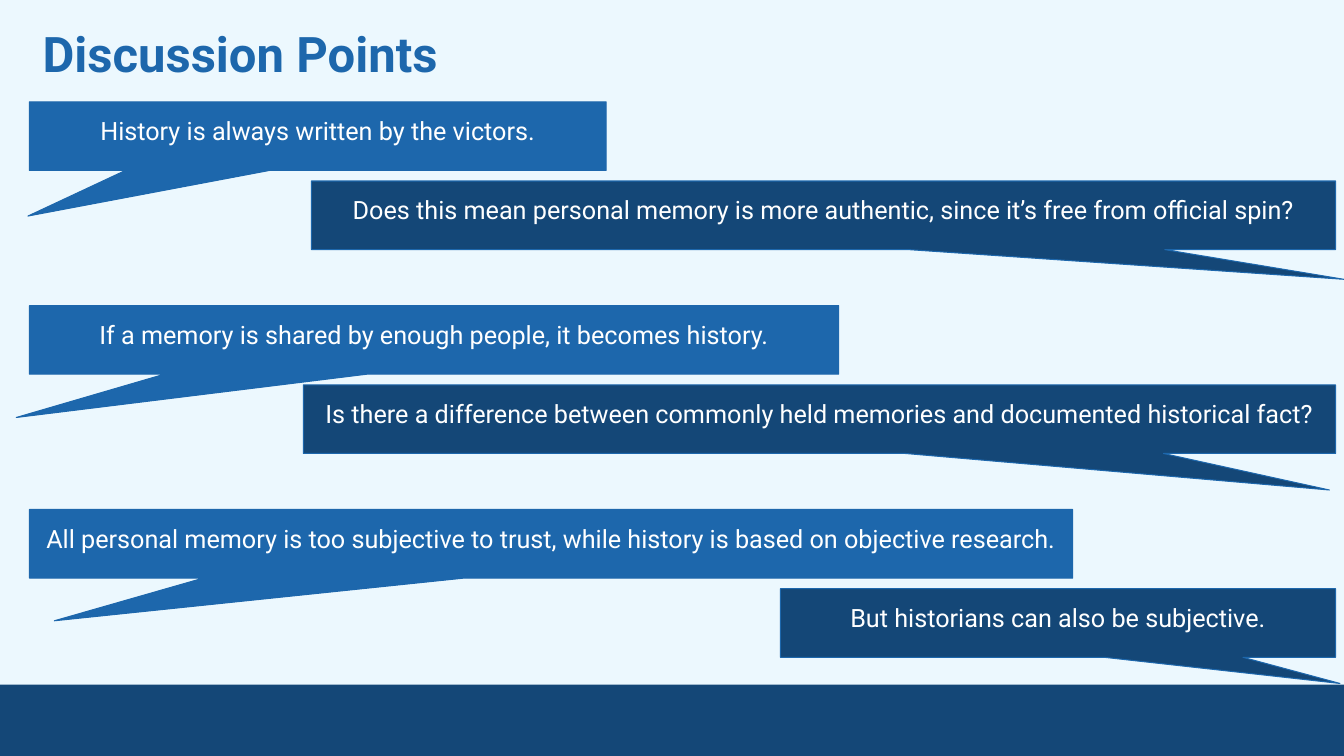
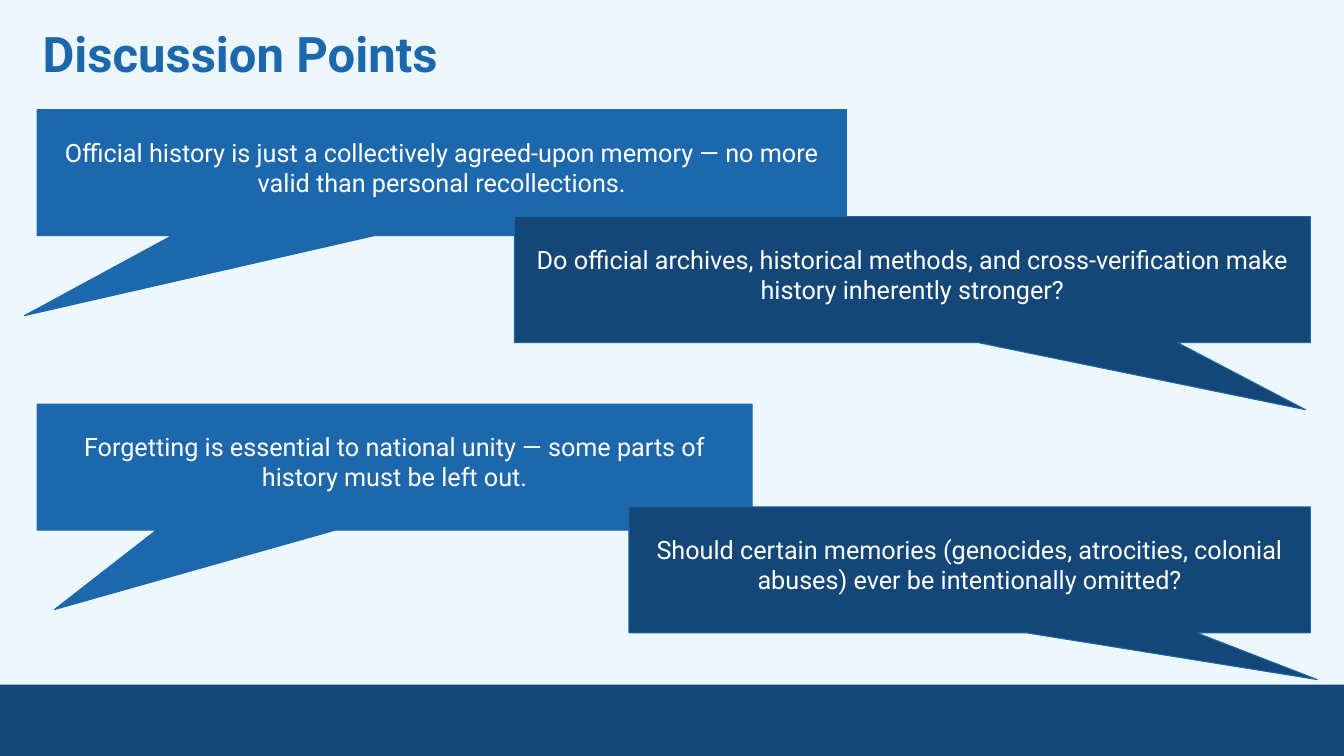
from dataclasses import dataclass
from pptx import Presentation
from pptx import util as u
from pptx.dml import color
from pptx.enum import shapes, text

Pt = u.Pt
KIND = shapes.MSO_SHAPE
HEAD = "Discussion Points"


@dataclass(frozen=True)
class Theme:
    font: str = "Roboto"
    pale: str = "ECF8FE"
    blue: str = "1D67AC"
    navy: str = "144777"
    white: str = "FFFFFF"
    head: int = 35
    body: int = 18
    wide: int = 960
    high: int = 540
    band: int = 51


T = Theme()


def rgb(code):
    return color.RGBColor.from_string(code)


def write(frame, words, size, ink, bold=False):
    run = frame.paragraphs[0].add_run()
    run.text = words
    run.font.name = T.font
    run.font.size = Pt(size)
    run.font.bold = bold
    run.font.color.rgb = rgb(ink)


def inset(frame, side, top, base):
    frame.word_wrap = True
    frame.margin_left = frame.margin_right = Pt(side)
    frame.margin_top, frame.margin_bottom = Pt(top), Pt(base)


def block(slide, kind, spot, fill, line=None):
    shape = slide.shapes.add_shape(kind, *map(Pt, spot))
    shape.shadow.inherit = False
    shape.fill.solid()
    shape.fill.fore_color.rgb = rgb(fill)
    if line:
        shape.line.color.rgb = rgb(line)
        shape.line.width = Pt(0.75)
    else:
        shape.line.fill.background()
    return shape


def page(deck):
    slide = deck.slides.add_slide(deck.slide_layouts[6])
    spot = (0, T.high - T.band, T.wide, T.band)
    block(slide, KIND.RECTANGLE, spot, T.navy)
    box = slide.shapes.add_textbox(Pt(21), Pt(7.5), Pt(919), Pt(60))
    inset(box.text_frame, 9.4, 9.4, 9.4)
    write(box.text_frame, HEAD, T.head, T.blue, True)
    return slide


def speak(slide, spot, tip, words, fill):
    x, y, w, h = spot
    shape = block(slide, KIND.ROUNDED_RECTANGULAR_CALLOUT, spot, fill, T.blue)
    shape.adjustments[0] = (tip[0] - x - w / 2) / w
    shape.adjustments[1] = (tip[1] - y - h / 2) / h
    shape.adjustments[2] = 0
    frame = shape.text_frame
    inset(frame, 7.2, 7.2, 15)
    frame.vertical_anchor = text.MSO_ANCHOR.MIDDLE
    frame.paragraphs[0].alignment = text.PP_ALIGN.CENTER
    write(frame, words, T.body, T.white)


def debate(slide, left, right, high, tops, lines):
    for i, (top, (wide, tip, words)) in enumerate(zip(tops, lines)):
        reply = i % 2
        x = right - wide if reply else left
        fill = T.navy if reply else T.blue
        speak(slide, (x, top, wide, high), tip, words, fill)


def main():
    deck = Presentation()
    deck.slide_width, deck.slide_height = Pt(T.wide), Pt(T.high)
    back = deck.slide_master.background.fill
    back.solid()
    back.fore_color.rgb = rgb(T.pale)

    tops = [72.7 + 145.6 * (i // 2) + 56.6 * (i % 2) for i in range(6)]
    debate(page(deck), 21, 954, 49, tops, [
        (412, (20, 154.3), "History is always written by the victors."),
        (731.5, (960, 199.5), "Does this mean personal memory is more authentic, "
         "since it’s free from official spin?"),
        (578, (11.6, 298.2), "If a memory is shared by enough people, "
         "it becomes history."),
        (737.3, (949.6, 350), "Is there a difference between commonly held memories "
         "and documented historical fact?"),
        (745.2, (38.8, 443.4), "All personal memory is too subjective to trust, "
         "while history is based on objective research."),
        (396.5, (957.2, 488.2), "But historians can also be subjective."),
    ])
    debate(page(deck), 26.6, 936, 90, (78.3, 154.8, 288.7, 362), [
        (578, (17.4, 225.5), "Official history is just a collectively agreed-upon "
         "memory — no more valid than personal recollections."),
        (568.6, (932.6, 292.7), "Do official archives, historical methods, and "
         "cross-verification make history inherently stronger?"),
        (510.6, (38.9, 435.4), "Forgetting is essential to national unity — "
         "some parts of history must be left out."),
        (486.7, (940.9, 485.4), "Should certain memories (genocides, atrocities, "
         "colonial abuses) ever be intentionally omitted?"),
    ])
    deck.save("out.pptx")


if __name__ == "__main__":
    main()
